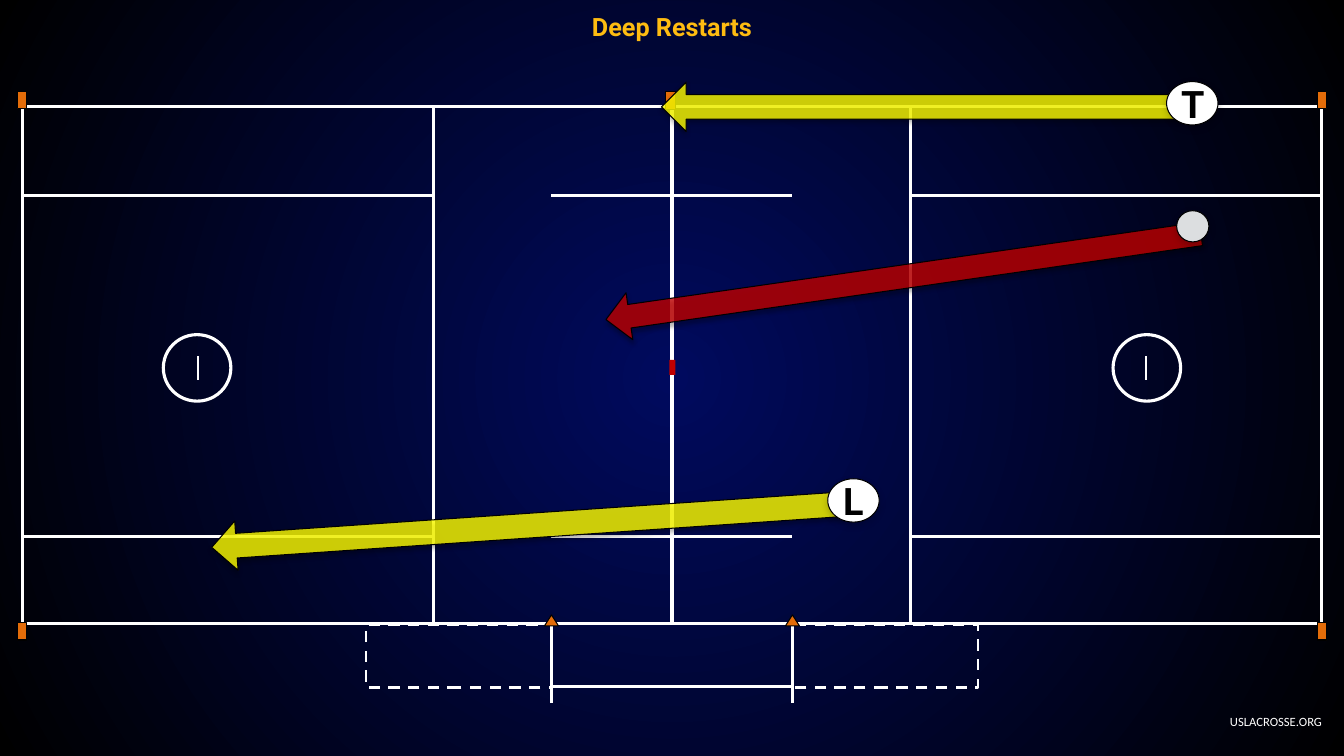
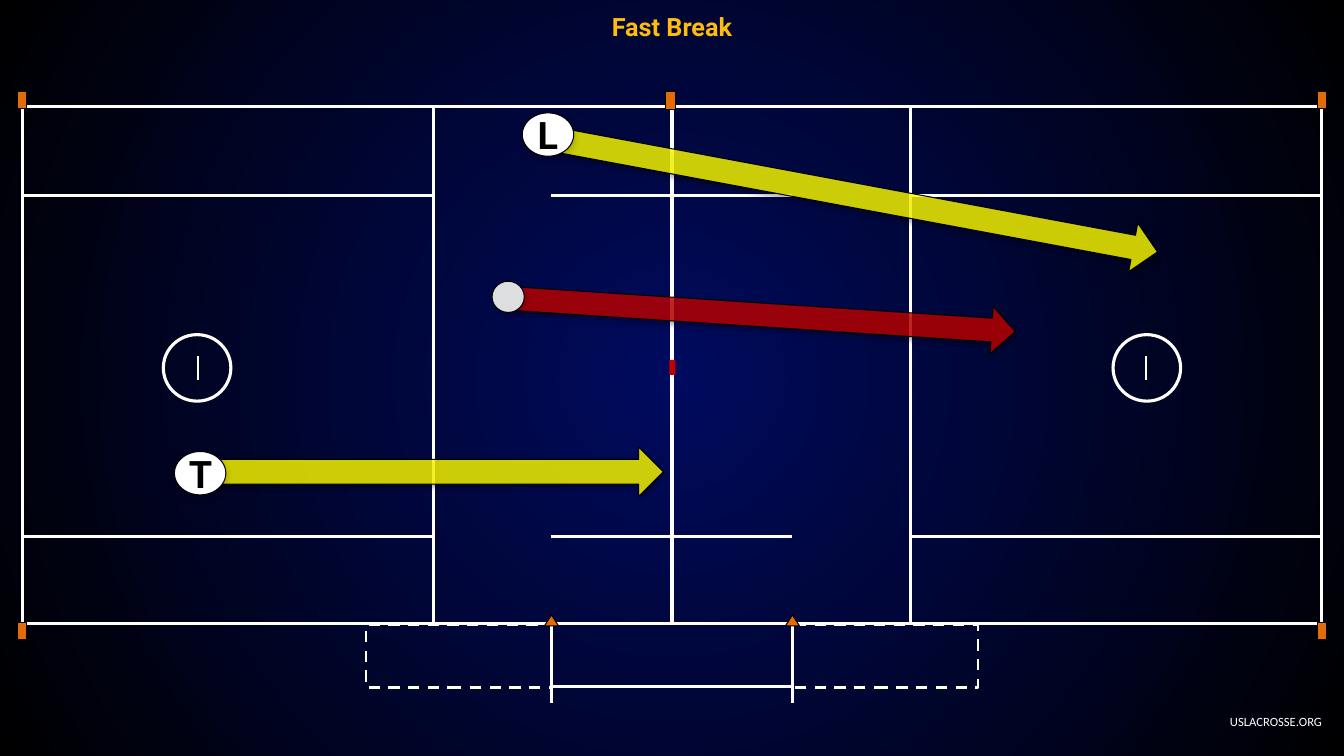
import math

from lxml import etree
from pptx import Presentation
from pptx.dml.color import RGBColor
from pptx.enum.dml import MSO_LINE
from pptx.enum.shapes import MSO_CONNECTOR, MSO_SHAPE
from pptx.enum.text import MSO_ANCHOR, PP_ALIGN
from pptx.oxml.ns import qn
from pptx.util import Inches, Pt

RECT, OVAL = MSO_SHAPE.RECTANGLE, MSO_SHAPE.OVAL
TRIANGLE, ARROW = MSO_SHAPE.ISOSCELES_TRIANGLE, MSO_SHAPE.RIGHT_ARROW
STRAIGHT = MSO_CONNECTOR.STRAIGHT
DASH = MSO_LINE.DASH
CENTER, RIGHT = PP_ALIGN.CENTER, PP_ALIGN.RIGHT
MIDDLE = MSO_ANCHOR.MIDDLE

WIDTH, HEIGHT = 13.33, 7.5
WHITE, BLACK, NAVY, GOLD = "FFFFFF", "000000", "000A5E", "FEBC11"
ORANGE, RED, YELLOW, GREY = "E36C09", "C00000", "FFFF00", "DCDEE0"
FOOTER = "USLACROSSE.ORG"

# Shadows: opacity %, blur pt, distance pt
ARROW_SHADOW = (35, 3.1, 1.8)
MARKER_SHADOW = (20, 5, 2)

# Arrows: colour, thickness, tail, tip.  Officials: letter, left, top.
SLIDES = [
    {
        "title": "Deep Restarts",
        "arrows": [
            (RED, 0.47, (11.91, 2.32), (6.01, 3.17)),
            (YELLOW, 0.49, (11.85, 1.06), (6.56, 1.06)),
            (YELLOW, 0.49, (8.39, 5.0), (2.1, 5.43)),
        ],
        "officials": [("T", 11.57, 0.81), ("L", 8.21, 4.75)],
        "ball": (11.67, 2.09),
    },
    {
        "title": "Fast Break",
        "arrows": [
            (RED, 0.47, (5.05, 2.96), (10.07, 3.29)),
            (YELLOW, 0.49, (2.01, 4.68), (6.58, 4.68)),
            (YELLOW, 0.49, (5.32, 1.35), (11.48, 2.5)),
        ],
        "officials": [("T", 1.73, 4.48), ("L", 5.18, 1.12)],
        "ball": (4.88, 2.79),
    },
]

# Left half of the field; the right half is its mirror.
MID, END, RESTRAINING, BENCH = WIDTH / 2, 0.22, 4.3, 5.47
TOP, WING_TOP, WING_BOTTOM, BOTTOM = 1.06, 1.94, 5.32, 6.19
TABLE_LINE = 6.81
AREAS = [  # left, top, right, bottom
    (RESTRAINING, TOP, MID, BOTTOM),
    (END, TOP, RESTRAINING, WING_TOP),
    (END, WING_BOTTOM, RESTRAINING, BOTTOM),
    (END, WING_TOP, RESTRAINING, WING_BOTTOM),
]
PYLONS = [(RECT, 0.17, 0.91, 0.09, 0.17), (RECT, 0.17, 6.18, 0.09, 0.17),
          (TRIANGLE, 5.4, 6.1, 0.14, 0.11)]
CREASE = (1.62, 3.32, 0.67, 0.66)
LINES = [  # x1, y1, x2, y2, width
    (1.96, 3.77, 1.96, 3.53, 1.5),
    (BENCH, 6.97, BENCH, 6.21, 2.25),
] + [(MID, y, BENCH, y, 2.25) for y in (WING_BOTTOM, WING_TOP, TABLE_LINE)]


def rgb(value):
    return RGBColor.from_string(value)


def sub(parent, tag, **attrs):
    return etree.SubElement(parent, qn(tag), {k: str(v) for k, v in attrs.items()})


def add_shape(s, kind, box, fill=None, line=None, width=0.75, mirror=False):
    left, top, w, h = box
    if mirror:
        left = WIDTH - left - w
    sp = s.shapes.add_shape(kind, *map(Inches, (left, top, w, h)))
    sp.shadow.inherit = False
    if mirror:
        sp._element.spPr.find(qn("a:xfrm")).set("flipH", "1")
    if fill:
        sp.fill.solid()
        sp.fill.fore_color.rgb = rgb(fill)
    else:
        sp.fill.background()
    if line:
        sp.line.color.rgb = rgb(line)
        sp.line.width = Pt(width)
    else:
        sp.line.fill.background()
    return sp


def add_line(s, x1, y1, x2, y2, width, mirror):
    if mirror:
        x1, x2 = WIDTH - x1, WIDTH - x2
    line = s.shapes.add_connector(STRAIGHT, *map(Inches, (x1, y1, x2, y2)))
    line.line.color.rgb = rgb(WHITE)
    line.line.width = Pt(width)
    sub(line._element.spPr, "a:effectLst")


def add_shadow(sp, opacity, blur, distance):
    effects = sp._element.spPr.find(qn("a:effectLst"))
    shadow = sub(effects, "a:outerShdw", blurRad=int(Pt(blur)), dist=int(Pt(distance)),
                 dir=90 * 60000, rotWithShape=0)
    sub(sub(shadow, "a:srgbClr", val=BLACK), "a:alpha", val=opacity * 1000)


def write(tf, text, size, font, color, bold=False, align=CENTER):
    tf.vertical_anchor = MIDDLE
    p = tf.paragraphs[0]
    p.alignment = align
    r = p.add_run()
    r.text = text
    r.font.size, r.font.name, r.font.bold = Pt(size), font, bold
    r.font.color.rgb = rgb(color)


def draw_field(s):
    for mirror in (False, True):
        for left, top, right, bottom in AREAS:
            add_shape(s, RECT, (left, top, right - left, bottom - top),
                      line=WHITE, width=2.25, mirror=mirror)
        bench = add_shape(s, RECT, (3.63, 6.2, BENCH - 3.63, 0.62),
                          line=WHITE, width=2, mirror=mirror)
        bench.line.dash_style = DASH
        add_shape(s, OVAL, CREASE, line=WHITE, width=2.25, mirror=mirror)
        for line in LINES:
            add_line(s, *line, mirror)
        for kind, *box in PYLONS:
            add_shape(s, kind, box, ORANGE, BLACK, mirror=mirror)
    add_shape(s, RECT, (6.6, 0.91, 0.1, 0.18), ORANGE, BLACK)
    add_shape(s, RECT, (6.64, 3.57, 0.06, 0.15), RED)


def add_footer(s):
    box = s.shapes.add_textbox(*map(Inches, (12.08, 7.03, 1.13, 0.25)))
    box.text_frame.word_wrap = False
    write(box.text_frame, FOOTER, 9, "Calibri", WHITE, align=RIGHT)


def set_up_layout(layout):
    """Give the layout its radial background and title place."""
    for ph in list(layout.placeholders):
        if ph.placeholder_format.idx != 0:
            ph.element.getparent().remove(ph.element)
    title = layout.placeholders[0]
    title.left, title.top = 0, Inches(0.05)
    title.width, title.height = Inches(WIDTH), Inches(0.42)
    fill = layout.background.fill
    fill.gradient()
    for stop, color in zip(fill.gradient_stops, (NAVY, BLACK)):
        stop.color.rgb = rgb(color)
    lin = layout.element.find(".//" + qn("a:lin"))
    gradient = lin.getparent()
    gradient.remove(lin)
    path = sub(gradient, "a:path", path="circle")
    sub(path, "a:fillToRect", l=50000, t=50000, r=50000, b=50000)


def move_to_layout(s, layout):
    """Hand the shapes drawn on a slide to its layout, to be shared by all slides."""
    for sp in list(s.shapes):
        if not sp.is_placeholder:
            layout.shapes.element.append(sp.element)


def add_arrow(s, color, thickness, tail, tip):
    dx, dy = tip[0] - tail[0], tip[1] - tail[1]
    length = math.hypot(dx, dy)
    left = (tail[0] + tip[0] - length) / 2
    top = (tail[1] + tip[1] - thickness) / 2
    sp = add_shape(s, ARROW, (left, top, length, thickness), color, BLACK)
    sp.rotation = math.degrees(math.atan2(dy, dx))
    sub(sp._element.spPr.find(qn("a:solidFill"))[0], "a:alpha", val=80000)
    add_shadow(sp, *ARROW_SHADOW)


def add_marker(s, box, fill):
    sp = add_shape(s, OVAL, box, fill, BLACK)
    add_shadow(sp, *MARKER_SHADOW)
    return sp


def add_play(s, play):
    write(s.shapes.title.text_frame, play["title"], 18, "Roboto", GOLD, True)
    for arrow in play["arrows"]:
        add_arrow(s, *arrow)
    for letter, left, top in play["officials"]:
        tf = add_marker(s, (left, top, 0.51, 0.43), WHITE).text_frame
        tf.margin_left = tf.margin_right = Inches(0.07)
        tf.margin_top = tf.margin_bottom = Inches(0.07)
        write(tf, letter, 27, "Roboto", BLACK, True)
    add_marker(s, (*play["ball"], 0.32, 0.31), GREY)


def main():
    prs = Presentation()
    prs.slide_width, prs.slide_height = Inches(WIDTH), Inches(HEIGHT)
    layout = prs.slide_layouts[5]
    set_up_layout(layout)
    slides = [prs.slides.add_slide(layout) for _ in SLIDES]
    draw_field(slides[0])
    add_footer(slides[0])
    move_to_layout(slides[0], layout)
    for s, play in zip(slides, SLIDES):
        add_play(s, play)
    prs.save("out.pptx")


if __name__ == "__main__":
    main()
